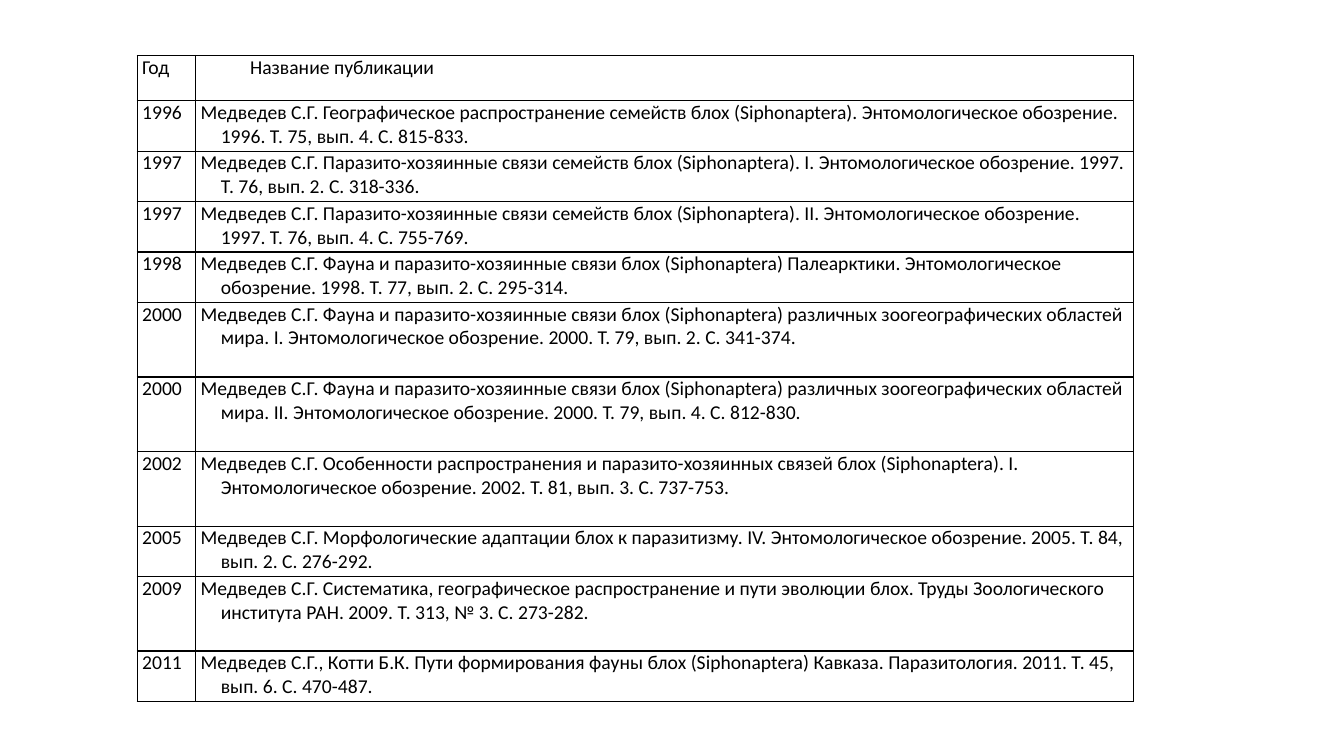
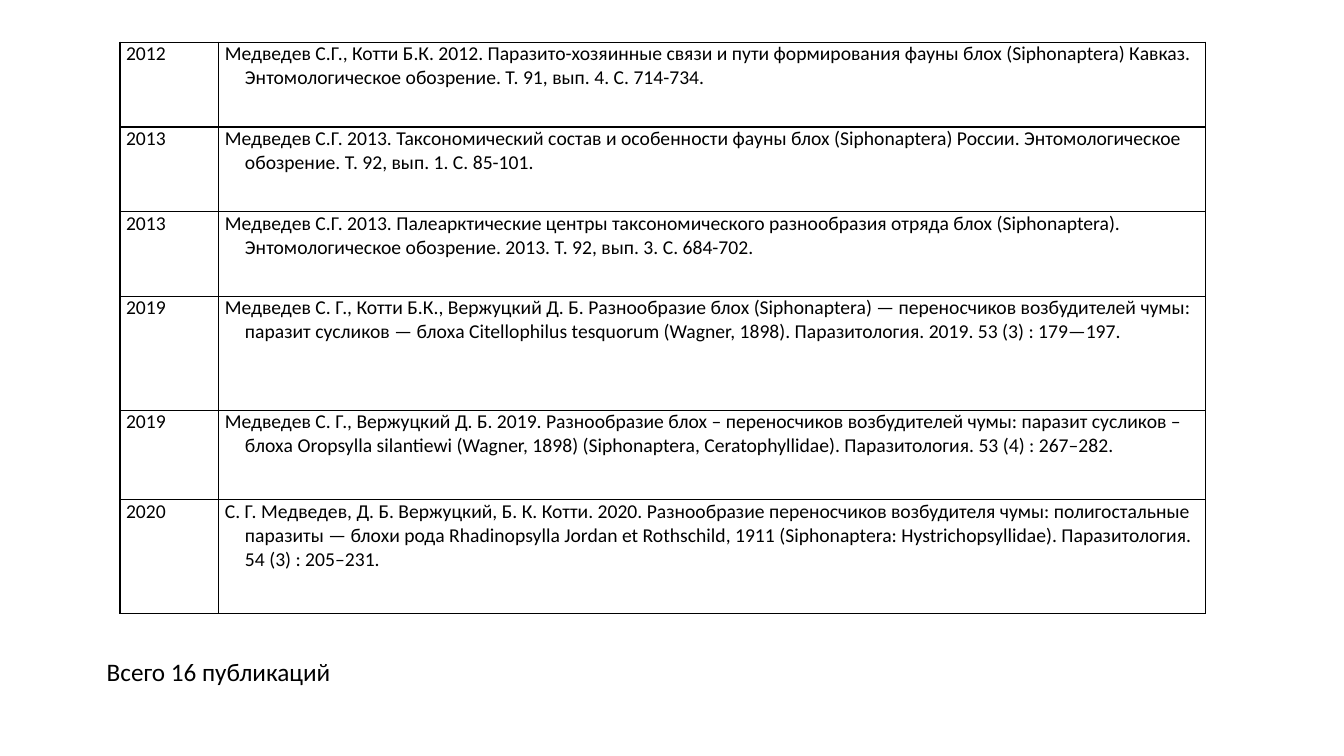
from dataclasses import dataclass

from lxml.etree import SubElement
from pptx import Presentation
from pptx.dml.color import RGBColor
from pptx.enum.text import MSO_ANCHOR
from pptx.oxml.ns import qn
from pptx.util import Inches, Pt

FONT = "Calibri"
INK = "000000"
BORDER_WIDTH = 1
HANG = 0.2
HEADER_INDENT = 0.49


@dataclass(frozen=True)
class Publication:
    """One table row: year, reference and row height in inches."""
    year: str
    reference: str
    height: float
    left: float = HANG
    first_line: float = -HANG


@dataclass(frozen=True)
class PublicationTable:
    """Place, column widths, side margin and rows of one table, in inches."""
    left: float
    top: float
    year_width: float
    reference_width: float
    margin: float
    rows: tuple[Publication, ...]


EARLY = PublicationTable(1.36, 0.55, 0.58, 9.3, 0.05, (
    Publication("Год", "Название публикации", 0.45, 0, HEADER_INDENT),
    Publication("1996", "Медведев С.Г. Географическое распространение семейств блох (Siphonaptera). "
                "Энтомологическое обозрение. 1996. Т. 75, вып. 4. С. 815-833.", 0.5),
    Publication("1997", "Медведев С.Г. Паразито-хозяинные связи семейств блох (Siphonaptera). I. "
                "Энтомологическое обозрение. 1997. Т. 76, вып. 2. С. 318-336.", 0.5),
    Publication("1997", "Медведев С.Г. Паразито-хозяинные связи семейств блох (Siphonaptera). II. "
                "Энтомологическое обозрение. 1997. Т. 76, вып. 4. С. 755-769.", 0.5),
    Publication("1998", "Медведев С.Г. Фауна и паразито-хозяинные связи блох (Siphonaptera) Палеарктики. "
                "Энтомологическое обозрение. 1998. Т. 77, вып. 2. С. 295-314.", 0.5),
    Publication("2000", "Медведев С.Г. Фауна и паразито-хозяинные связи блох (Siphonaptera) различных "
                "зоогеографических областей мира. I. Энтомологическое обозрение. 2000. "
                "T. 79, вып. 2. С. 341-374.", 0.74),
    Publication("2000", "Медведев С.Г. Фауна и паразито-хозяинные связи блох (Siphonaptera) различных "
                "зоогеографических областей мира. II. Энтомологическое обозрение. 2000. "
                "T. 79, вып. 4. С. 812-830.", 0.74),
    Publication("2002", "Медведев С.Г. Особенности распространения и паразито-хозяинных связей блох "
                "(Siphonaptera). I. Энтомологическое обозрение. 2002. Т. 81, вып. 3. С. 737-753.", 0.74),
    Publication("2005", "Медведев С.Г. Морфологические адаптации блох к паразитизму. IV. "
                "Энтомологическое обозрение. 2005. Т. 84, вып. 2. С. 276-292.", 0.5),
    Publication("2009", "Медведев С.Г. Систематика, географическое распространение и пути эволюции блох. "
                "Труды Зоологического института РАН. 2009. Т. 313, № 3. С. 273-282.", 0.74),
    Publication("2011", "Медведев С.Г., Котти Б.К. Пути формирования фауны блох (Siphonaptera) Кавказа. "
                "Паразитология. 2011. Т. 45, вып. 6. С. 470-487.", 0.5),
))

LATE = PublicationTable(1.19, 0.42, 0.98, 9.79, 0.06, (
    Publication("2012", "Медведев С.Г., Котти Б.К. 2012. Паразито-хозяинные связи и пути формирования "
                "фауны блох (Siphonaptera) Кавказ. Энтомологическое обозрение. "
                "Т. 91, вып. 4. С. 714-734.", 0.84),
    Publication("2013", "Медведев С.Г. 2013. Таксономический состав и особенности фауны блох "
                "(Siphonaptera) России. Энтомологическое обозрение. Т. 92, вып. 1. С. 85-101.", 0.84),
    Publication("2013", "Медведев С.Г. 2013. Палеарктические центры таксономического разнообразия отряда "
                "блох (Siphonaptera). Энтомологическое обозрение. 2013. Т. 92, вып. 3. С. 684-702.", 0.84),
    Publication("2019", "Медведев С. Г., Котти Б.К., Вержуцкий Д. Б. Разнообразие блох (Siphonaptera) — "
                "переносчиков возбудителей чумы: паразит сусликов — блоха Citellophilus tesquorum "
                "(Wagner, 1898). Паразитология. 2019. 53 (3) : 179—197.", 1.13),
    Publication("2019", "Медведев С. Г., Вержуцкий Д. Б. 2019. Разнообразие блох – переносчиков "
                "возбудителей чумы: паразит сусликов – блоха Oropsylla silantiewi (Wagner, 1898) "
                "(Siphonaptera, Ceratophyllidae). Паразитология. 53 (4) : 267–282.", 0.89),
    Publication("2020", "С. Г. Медведев, Д. Б. Вержуцкий, Б. К. Котти. 2020. Разнообразие переносчиков "
                "возбудителя чумы: полигостальные паразиты — блохи рода Rhadinopsylla Jordan et "
                "Rothschild, 1911 (Siphonaptera: Hystrichopsyllidae). Паразитология. "
                "54 (3) : 205–231.", 1.13),
))


def color(value: str) -> RGBColor:
    """Turn a hex string into a colour."""
    return RGBColor.from_string(value)


def write(frame, text: str, *, size: float = 14, left: float = 0, first_line: float = 0) -> None:
    """Write one formatted paragraph into a text frame."""
    frame.word_wrap = True
    para = frame.paragraphs[0]
    properties = para._p.get_or_add_pPr()
    properties.set("marL", str(Inches(left)))
    properties.set("indent", str(Inches(first_line)))
    span = para.add_run()
    span.text = text
    span.font.name = FONT
    span.font.size = Pt(size)
    span.font.color.rgb = color(INK)


def format_cell(cell, margin: float) -> None:
    """Give a cell its margins, empty fill and four borders."""
    cell.margin_left = cell.margin_right = Inches(margin)
    cell.margin_top = cell.margin_bottom = 0
    cell.vertical_anchor = MSO_ANCHOR.TOP
    cell.fill.background()
    properties = cell._tc.get_or_add_tcPr()
    for position, side in enumerate(("lnL", "lnR", "lnT", "lnB")):
        line = SubElement(properties, qn(f"a:{side}"), w=str(Pt(BORDER_WIDTH)))
        fill = SubElement(line, qn("a:solidFill"))
        SubElement(fill, qn("a:srgbClr"), val=INK)
        properties.insert(position, line)


def draw_table(page, layout: PublicationTable) -> None:
    """Draw a bordered table of publications."""
    widths = (layout.year_width, layout.reference_width)
    height = sum(row.height for row in layout.rows)
    table = page.shapes.add_table(
        len(layout.rows), len(widths), Inches(layout.left), Inches(layout.top),
        Inches(sum(widths)), Inches(height)).table
    table.first_row = table.horz_banding = False
    for column, width in zip(table.columns, widths):
        column.width = Inches(width)
    for table_row, row in zip(table.rows, layout.rows):
        table_row.height = Inches(row.height)
        year, reference = table_row.cells
        for cell in (year, reference):
            format_cell(cell, layout.margin)
        write(year.text_frame, row.year)
        write(reference.text_frame, row.reference, left=row.left, first_line=row.first_line)


def main() -> None:
    """Build and save the deck."""
    deck = Presentation()
    deck.slide_width, deck.slide_height = Inches(13.33), Inches(7.5)
    blank = deck.slide_layouts[6]
    for layout in (EARLY, LATE):
        page = deck.slides.add_slide(blank)
        draw_table(page, layout)
    box = page.shapes.add_textbox(Inches(0.96), Inches(6.46), Inches(5.38), Inches(0.4))
    write(box.text_frame, "Всего 16 публикаций", size=18)
    deck.save("out.pptx")


if __name__ == "__main__":
    main()
